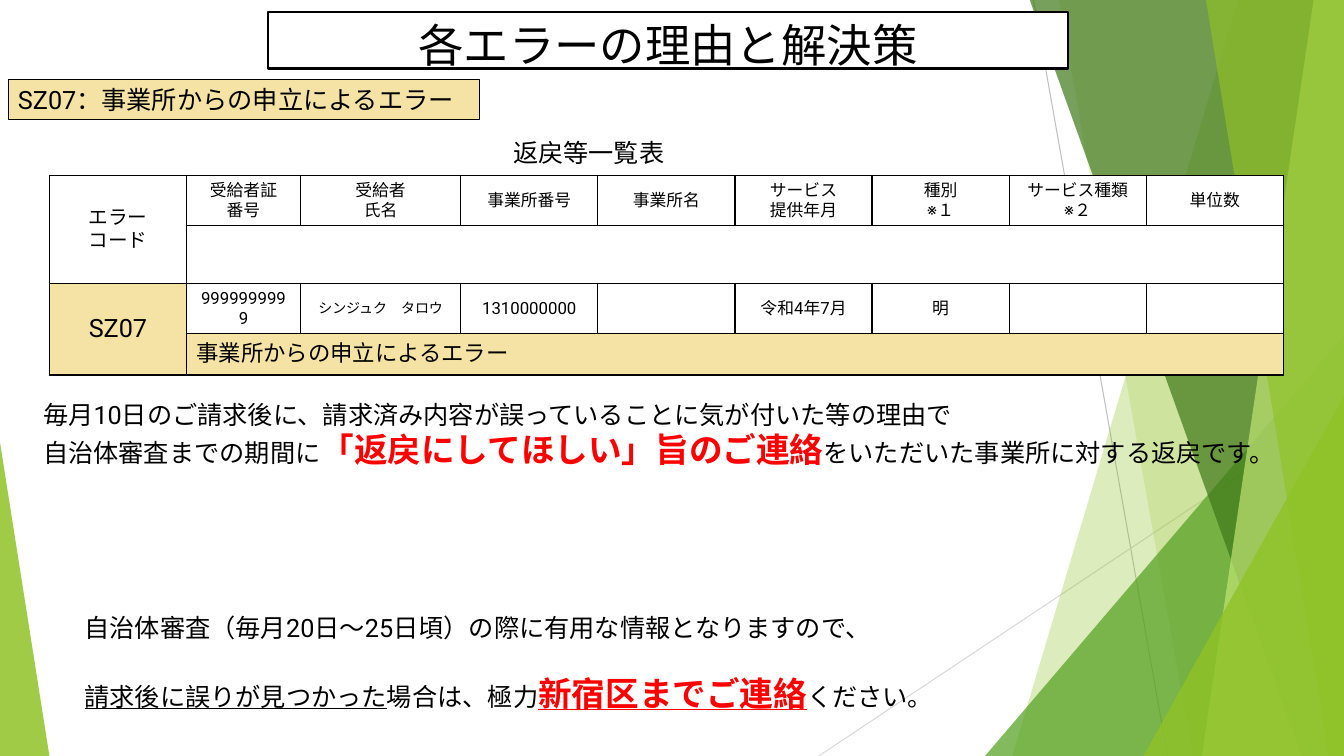
from dataclasses import dataclass

from lxml.etree import SubElement
from pptx import Presentation
from pptx.dml.color import RGBColor
from pptx.enum.shapes import MSO_CONNECTOR, MSO_SHAPE
from pptx.enum.text import MSO_ANCHOR, MSO_AUTO_SIZE, PP_ALIGN
from pptx.oxml import parse_xml
from pptx.oxml.ns import nsdecls, qn
from pptx.util import Inches, Pt


@dataclass(frozen=True)
class Theme:
    font: str = "Roboto"
    black: str = "000000"
    white: str = "FFFFFF"
    red: str = "FF0000"
    sand: str = "F5E3A5"
    lime: str = "90C226"
    green: str = "54A021"
    forest: str = "3F7819"
    pale_lime: str = "C0E474"
    gray: str = "BFBFBF"
    light_gray: str = "D9D9D9"
    title: float = 32.4
    emphasis: int = 24
    body: int = 18
    message: int = 16
    label: int = 14
    cell: int = 12
    small: int = 10


THEME = Theme()
SLIDE_WIDTH, SLIDE_HEIGHT = 13.33, 7.5
TOP = -0.01

# Slanted bands: top-left x, bottom-left x, colour, opacity; all reach the right edge
BANDS_BEHIND = [
    (12.28, 10.04, THEME.lime, 30),
    (10.5, 11.83, THEME.lime, 20),
]
BANDS_FRONT = [
    (10.21, 12.91, THEME.forest, 70),
    (13.03, 11.92, THEME.pale_lime, 70),
    (11.96, 13.18, THEME.lime, 65),
]

COLUMN_WIDTHS = [1.36, 1.13, 1.59] + [1.36] * 6
ROW_HEIGHTS = [0.5, 0.57, 0.5, 0.41]
HEADERS = [
    ["受給者証", "番号"], ["受給者", "氏名"], ["事業所番号"], ["事業所名"],
    ["サービス", "提供年月"], ["種別", "※１"], ["サービス種類", "※２"], ["単位数"],
]
RECORD = [
    ("9999999999", THEME.cell), ("シンジュク　タロウ", THEME.small),
    ("1310000000", THEME.cell), None, ("令和4年7月", THEME.cell),
    ("明", THEME.cell), None, None,
]


def rgb(color):
    return RGBColor.from_string(color)


def add_run(paragraph, text, size=THEME.body, color=THEME.black, bold=False, underline=False):
    run = paragraph.add_run()
    run.text = text
    font = run.font
    font.size, font.bold, font.underline = Pt(size), bold, underline
    font.color.rgb = rgb(color)
    font.name = THEME.font
    east_asian = SubElement(run._r.get_or_add_rPr(), qn("a:ea"))
    east_asian.set("typeface", THEME.font)


def write_lines(frame, lines, size=THEME.body, align=PP_ALIGN.LEFT):
    """Each line is a plain string or a list of (text, run format) pairs."""
    for index, line in enumerate(lines):
        paragraph = frame.paragraphs[0] if index == 0 else frame.add_paragraph()
        paragraph.alignment = align
        runs = [(line, {"size": size})] if isinstance(line, str) else line
        for text, style in runs:
            add_run(paragraph, text, **style)


def set_box(shape, fill, line_width):
    shape.fill.solid()
    shape.fill.fore_color.rgb = rgb(fill)
    shape.line.color.rgb = rgb(THEME.black)
    shape.line.width = Pt(line_width)


def set_glass(shape, color, opacity):
    shape.shadow.inherit = False
    shape.fill.solid()
    shape.fill.fore_color.rgb = rgb(color)
    shape.line.fill.background()
    color_node = shape.element.spPr.find(".//" + qn("a:srgbClr"))
    SubElement(color_node, qn("a:alpha")).set("val", str(opacity * 1000))


def add_hairline(slide, start, end, color):
    line = slide.shapes.add_connector(
        MSO_CONNECTOR.STRAIGHT, *(Inches(value) for value in start + end))
    line.line.color.rgb = rgb(color)
    line.line.width = Pt(0.75)
    SubElement(line.element.spPr, qn("a:effectLst"))


def add_band(slide, top_x, bottom_x, color, opacity):
    corners = [(SLIDE_WIDTH, TOP), (SLIDE_WIDTH, SLIDE_HEIGHT), (bottom_x, SLIDE_HEIGHT)]
    builder = slide.shapes.build_freeform(Inches(top_x), Inches(TOP))
    builder.add_line_segments([(Inches(x), Inches(y)) for x, y in corners], close=True)
    set_glass(builder.convert_to_shape(), color, opacity)


def add_triangle(slide, left, top, width, apex, color, opacity):
    shape = slide.shapes.add_shape(
        MSO_SHAPE.ISOSCELES_TRIANGLE, Inches(left), Inches(top),
        Inches(width), Inches(SLIDE_HEIGHT - top))
    shape.adjustments[0] = apex
    set_glass(shape, color, opacity)


def add_decoration(slide):
    add_hairline(slide, (10.25, 0), (11.58, SLIDE_HEIGHT), THEME.gray)
    add_hairline(slide, (SLIDE_WIDTH, 4.03), (8.12, SLIDE_HEIGHT), THEME.light_gray)
    for band in BANDS_BEHIND:
        add_band(slide, *band)
    add_triangle(slide, 9.77, 3.33, 3.56, 1, THEME.green, 72)
    for band in BANDS_FRONT:
        add_band(slide, *band)
    add_triangle(slide, 11.34, 3.93, 1.99, 1, THEME.lime, 80)
    add_triangle(slide, 0, 4.39, 0.49, 0, THEME.lime, 85)


def add_title(slide, text):
    title = slide.shapes.title
    title.element.getparent().append(title.element)  # in front of the decoration
    title.left, title.top = Inches(2.66), Inches(0.12)
    title.width, title.height = Inches(7.93), Inches(0.56)
    set_box(title, THEME.white, 1.5)
    frame = title.text_frame
    frame.auto_size = MSO_AUTO_SIZE.NONE
    frame.vertical_anchor = MSO_ANCHOR.TOP
    write_lines(frame, [text], THEME.title, PP_ALIGN.CENTER)


def add_error_tag(slide, text):
    tag = slide.shapes.add_shape(
        MSO_SHAPE.RECTANGLE, Inches(0.08), Inches(0.79), Inches(4.68), Inches(0.4))
    tag.shadow.inherit = False
    set_box(tag, THEME.sand, 0.75)
    tag.text_frame.vertical_anchor = MSO_ANCHOR.TOP
    write_lines(tag.text_frame, [text])


def add_text(slide, left, top, width, height, lines):
    box = slide.shapes.add_textbox(Inches(left), Inches(top), Inches(width), Inches(height))
    frame = box.text_frame
    frame.word_wrap = False
    frame.auto_size = MSO_AUTO_SIZE.SHAPE_TO_FIT_TEXT
    write_lines(frame, lines)
    return frame


def format_cell(cell, fill):
    cell.fill.solid()
    cell.fill.fore_color.rgb = rgb(fill)
    cell.vertical_anchor = MSO_ANCHOR.MIDDLE
    properties = cell._tc.get_or_add_tcPr()
    for index, side in enumerate(("lnL", "lnR", "lnT", "lnB")):
        properties.insert(index, parse_xml(
            f'<a:{side} {nsdecls("a")} w="{Pt(1)}"><a:solidFill>'
            f'<a:srgbClr val="{THEME.black}"/></a:solidFill></a:{side}>'))


def add_error_table(slide):
    table = slide.shapes.add_table(
        len(ROW_HEIGHTS), len(COLUMN_WIDTHS), Inches(0.49), Inches(1.74),
        Inches(sum(COLUMN_WIDTHS)), Inches(sum(ROW_HEIGHTS))).table
    table.first_row = table.horz_banding = False
    for column, width in zip(table.columns, COLUMN_WIDTHS):
        column.width = Inches(width)
    for row, height in zip(table.rows, ROW_HEIGHTS):
        row.height = Inches(height)
    for row in range(len(ROW_HEIGHTS)):
        for column in range(len(COLUMN_WIDTHS)):
            is_error = row == 3 or (row == 2 and column == 0)
            format_cell(table.cell(row, column), THEME.sand if is_error else THEME.white)

    # The code column spans row pairs; the second row of each pair is one wide cell
    for row in (0, 2):
        table.cell(row, 0).merge(table.cell(row + 1, 0))
        table.cell(row + 1, 1).merge(table.cell(row + 1, 8))

    center = PP_ALIGN.CENTER
    write_lines(table.cell(0, 0).text_frame, ["エラー", "コード"], THEME.label, center)
    write_lines(table.cell(2, 0).text_frame, ["SZ07"], THEME.body, center)
    write_lines(table.cell(3, 1).text_frame, ["事業所からの申立によるエラー"], THEME.message)
    for column, (header, entry) in enumerate(zip(HEADERS, RECORD), start=1):
        write_lines(table.cell(0, column).text_frame, header, THEME.cell, center)
        if entry:
            text, size = entry
            write_lines(table.cell(2, column).text_frame, [text], size, center)


def main():
    presentation = Presentation()
    presentation.slide_width, presentation.slide_height = Inches(SLIDE_WIDTH), Inches(SLIDE_HEIGHT)
    slide = presentation.slides.add_slide(presentation.slide_layouts[5])
    emphasis = {"size": THEME.emphasis, "color": THEME.red, "bold": True}

    # Background, title and error tag
    add_decoration(slide)
    add_title(slide, "各エラーの理由と解決策")
    add_error_tag(slide, "SZ07：事業所からの申立によるエラー")

    # Table with its caption
    add_error_table(slide)
    add_text(slide, 4.99, 1.31, 1.72, 0.4, ["返戻等一覧表"])

    # Reason and advice
    add_text(slide, 0.33, 3.91, 12.57, 0.81, [
        "毎月10日のご請求後に、請求済み内容が誤っていることに気が付いた等の理由で",
        [("自治体審査までの期間に", {}), ("「返戻にしてほしい」旨のご連絡", emphasis),
         ("をいただいた事業所に対する返戻です。", {})],
    ])
    advice = add_text(slide, 0.74, 6.03, 8.7, 1.11, [
        "自治体審査（毎月20日～25日頃）の際に有用な情報となりますので、",
        [("請求後に誤りが見つかった", {"underline": True}), ("場合は、極力", {}),
         ("新宿区までご連絡", {**emphasis, "underline": True}), ("ください。", {})],
    ])
    advice.paragraphs[1].space_before = Pt(21)

    presentation.save("out.pptx")


if __name__ == "__main__":
    main()
